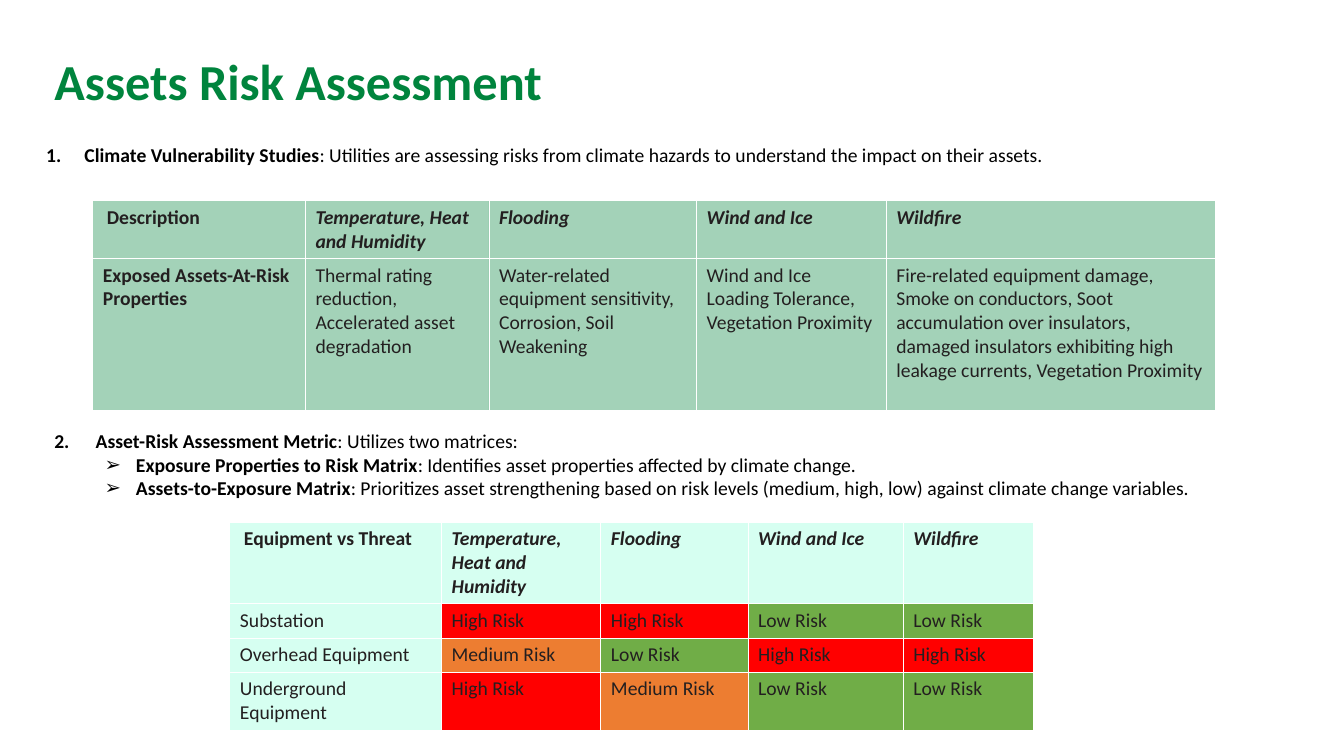
from dataclasses import dataclass

from lxml.etree import SubElement
from pptx import Presentation
from pptx.dml.color import RGBColor
from pptx.enum.text import MSO_ANCHOR, PP_ALIGN
from pptx.oxml.ns import qn
from pptx.slide import Slide
from pptx.util import Pt

PX = 9144  # EMU per px, 100 px to the inch
FONT = "Calibri"
COLORS = {
    "title": "00843D", "text": "000000", "cell": "231F20", "border": "FFFFFF",
    "green": "00833C", "mint": "D6FFF1",
    "High Risk": "FF0000", "Medium Risk": "ED7D31", "Low Risk": "70AD47",
}


@dataclass(frozen=True)
class Box:
    left: int
    top: int
    width: int
    height: int

    def emu(self) -> tuple[int, ...]:
        return tuple(v * PX for v in (self.left, self.top, self.width, self.height))


@dataclass(frozen=True)
class Item:
    lead: str
    rest: str
    bullet: str | int  # a number starts automatic numbering there
    margin: int
    hanging: int
    level: int = 0


@dataclass(frozen=True)
class Grid:
    left: int
    top: int
    cols: list[int]
    rows: list[int]
    cells: list[list[str]]
    fill: str
    alpha: int = 100
    bold_first_col: bool = False


TITLE_BOX = Box(44, 43, 825, 73)

LISTS = [
    (Box(36, 106, 1224, 94), MSO_ANCHOR.MIDDLE, [
        Item("Climate Vulnerability Studies",
             ": Utilities are assessing risks from climate hazards to understand "
             "the impact on their assets.", 1, 38, 38),
    ]),
    (Box(44, 421, 1182, 81), MSO_ANCHOR.TOP, [
        Item("Asset-Risk Assessment Metric", ": Utilizes two matrices:", 2, 41, 41),
        Item("Exposure Properties to Risk Matrix",
             ": Identifies asset properties affected by climate change.", "➢", 81, 31, 1),
        Item("Assets-to-Exposure Matrix",
             ": Prioritizes asset strengthening based on risk levels (medium, high, low) "
             "against climate change variables.", "➢", 81, 31, 1),
    ]),
]

THREATS = ["Temperature, Heat and Humidity", "Flooding", "Wind and Ice", "Wildfire"]
HIGH, MEDIUM, LOW = "High Risk", "Medium Risk", "Low Risk"

GRIDS = [
    Grid(92, 199, [211, 182, 206, 188, 327], [57, 151], [
        ["Description", *THREATS],
        ["Exposed Assets-At-Risk Properties",
         "Thermal rating reduction, Accelerated asset degradation",
         "Water-related equipment sensitivity, Corrosion, Soil Weakening",
         "Wind and Ice Loading Tolerance, Vegetation Proximity",
         "Fire-related equipment damage, Smoke on conductors, Soot accumulation over "
         "insulators, damaged insulators exhibiting high leakage currents, "
         "Vegetation Proximity"],
    ], "green", alpha=36, bold_first_col=True),
    Grid(228, 518, [210, 158, 146, 154, 129], [80, 34, 34, 57], [
        ["Equipment vs Threat", *THREATS],
        ["Substation", HIGH, HIGH, LOW, LOW],
        ["Overhead Equipment", MEDIUM, LOW, HIGH, HIGH],
        ["Underground Equipment", HIGH, MEDIUM, LOW, LOW],
    ], "mint"),
]


def color(name: str) -> RGBColor:
    return RGBColor.from_string(COLORS[name])


def add_run(p, text: str, name: str, size: int = 14, **style) -> None:
    r = p.add_run()
    r.text = text
    r.font.color.rgb = color(name)
    for key, value in {"name": FONT, "size": Pt(size), **style}.items():
        setattr(r.font, key, value)


def set_bullet(p, item: Item) -> None:
    pPr = p._p.get_or_add_pPr()
    pPr.set("marL", str(item.margin * PX))
    pPr.set("indent", str(-item.hanging * PX))
    if isinstance(item.bullet, int):
        SubElement(pPr, qn("a:buFont"), typeface="+mj-lt")
        SubElement(pPr, qn("a:buAutoNum"), type="arabicPeriod", startAt=str(item.bullet))
    else:
        SubElement(pPr, qn("a:buFont"), typeface="Arial")
        SubElement(pPr, qn("a:buChar"), char=item.bullet)


def add_title(s: Slide, text: str) -> None:
    sp = s.shapes.title
    for key, value in zip(("left", "top", "width", "height"), TITLE_BOX.emu()):
        setattr(sp, key, value)
    tf = sp.text_frame
    tf.vertical_anchor = MSO_ANCHOR.MIDDLE
    p = tf.paragraphs[0]
    p.alignment = PP_ALIGN.LEFT
    add_run(p, text, "title", 36, bold=True)


def add_list(s: Slide, box: Box, anchor: MSO_ANCHOR, items: list[Item]) -> None:
    tf = s.shapes.add_textbox(*box.emu()).text_frame
    tf.word_wrap = True
    tf.vertical_anchor = anchor
    for i, item in enumerate(items):
        p = tf.add_paragraph() if i else tf.paragraphs[0]
        p.level = item.level
        set_bullet(p, item)
        add_run(p, item.lead, "text", bold=True)
        add_run(p, item.rest, "text", bold=False)


def set_borders(cell) -> None:
    tcPr = cell._tc.get_or_add_tcPr()
    for side in ("lnL", "lnR", "lnT", "lnB"):
        ln = SubElement(tcPr, qn(f"a:{side}"), w=str(Pt(0.75)))
        fill = SubElement(ln, qn("a:solidFill"))
        SubElement(fill, qn("a:srgbClr"), val=COLORS["border"])


def fill_cell(cell, name: str, alpha: int) -> None:
    cell.fill.solid()
    cell.fill.fore_color.rgb = color(name)
    if alpha < 100:
        clr = cell._tc.tcPr.find(f"{qn('a:solidFill')}/{qn('a:srgbClr')}")
        SubElement(clr, qn("a:alpha"), val=str(alpha * 1000))


def add_grid(s: Slide, grid: Grid) -> None:
    box = Box(grid.left, grid.top, sum(grid.cols), sum(grid.rows))
    table = s.shapes.add_table(len(grid.rows), len(grid.cols), *box.emu()).table
    table.first_row = table.horz_banding = False
    for col, width in zip(table.columns, grid.cols):
        col.width = width * PX
    for row, height in zip(table.rows, grid.rows):
        row.height = height * PX
    for i, texts in enumerate(grid.cells):
        for j, text in enumerate(texts):
            cell = table.cell(i, j)
            header, first = i == 0, j == 0
            cell.margin_left = (14 if header and first else 10) * PX
            cell.margin_right = 13 * PX
            set_borders(cell)
            fill_cell(cell, text if text in COLORS else grid.fill, grid.alpha)
            add_run(cell.text_frame.paragraphs[0], text, "cell",
                    bold=header or (first and grid.bold_first_col),
                    italic=header and not first)


def main() -> None:
    prs = Presentation()
    prs.slide_width, prs.slide_height = 1333 * PX, 750 * PX
    s = prs.slides.add_slide(prs.slide_layouts.get_by_name("Title Only"))

    # Heading
    add_title(s, "Assets Risk Assessment")
    # Exposure and risk tables
    for grid in GRIDS:
        add_grid(s, grid)
    # Numbered points
    for box, anchor, items in LISTS:
        add_list(s, box, anchor, items)

    prs.save("out.pptx")


if __name__ == "__main__":
    main()
